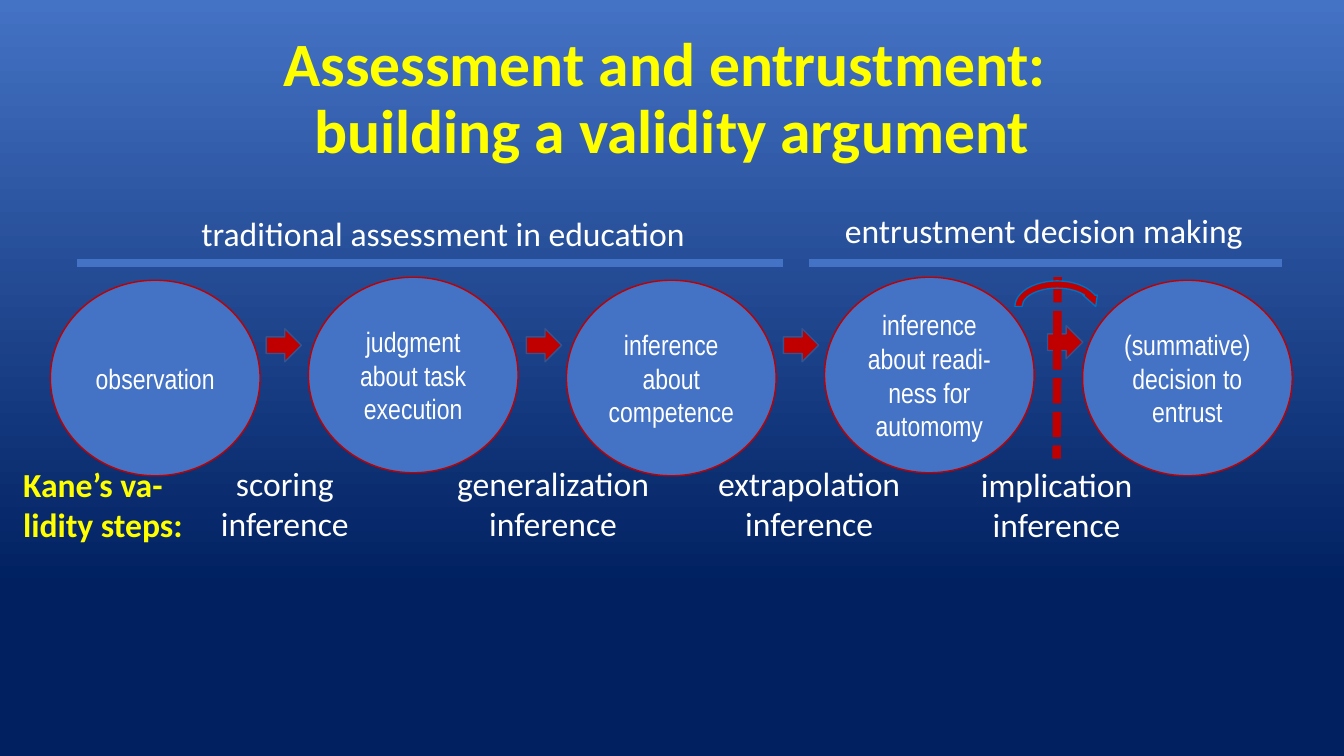
"""Build the slide on assessment, entrustment and the validity argument."""
from dataclasses import dataclass
from typing import NamedTuple

from lxml.etree import SubElement
from pptx import Presentation
from pptx.dml.color import RGBColor
from pptx.enum.dml import MSO_LINE
from pptx.enum.shapes import MSO_CONNECTOR, MSO_SHAPE
from pptx.enum.text import MSO_ANCHOR, MSO_AUTO_SIZE, PP_ALIGN
from pptx.oxml.ns import qn
from pptx.util import Inches, Pt

WIDTH, HEIGHT = Inches(13.33), Inches(7.5)
BLUE, NAVY, RED, YELLOW, WHITE = "4472C4", "002060", "C00000", "FFFF00", "FFFFFF"


class Area(NamedTuple):
    """Left, top, width and height as percentages of the slide."""
    left: float
    top: float
    width: float
    height: float


@dataclass
class Style:
    """Look of a piece of text."""
    size: float
    font: str = "Calibri"
    color: str = WHITE
    bold: bool = False
    align: PP_ALIGN = PP_ALIGN.CENTER


@dataclass
class Label:
    """Free text with its place and style."""
    lines: list[str]
    area: Area
    style: Style
    wrap: bool = False


@dataclass
class Stroke:
    """Straight line between two points given in percentages."""
    start: tuple[float, float]
    end: tuple[float, float]
    color: str
    dashed: bool = False


HEADING = Style(24, align=PP_ALIGN.LEFT)
INFERENCE = Style(24)
KANE = Style(24, color=YELLOW, bold=True, align=PP_ALIGN.LEFT)
STAGE = Style(20, "Arial Narrow")
TITLE = Style(44, color=YELLOW, bold=True)

STAGES = ["observation", "judgment about task execution", "inference about competence",
          "inference about readi- ness for automomy", "(summative) decision to entrust"]
STAGE_LEFT, STAGE_PITCH, STAGE_TOPS = 3.75, 19.2, (37.07, 36.67)
ARROWS = [(19.8, 43.47), (77.94, 43.07), (58.29, 43.47), (39.16, 43.47)]
STROKES = [Stroke((5.7, 34.8), (58.29, 34.8), BLUE),
           Stroke((60.17, 34.8), (95.42, 34.8), BLUE),
           Stroke((78.69, 36.67), (78.62, 60.67), RED, True)]
LABELS = [
    Label(["traditional assessment in education"], Area(14.25, 27.47, 37.81, 6.67), HEADING),
    Label(["entrustment decision making"], Area(62.12, 27.07, 31.43, 6.67), HEADING),
    Label(["scoring", "inference"], Area(15.6, 60.53, 11.18, 12.13), INFERENCE),
    Label(["generalization", "inference"], Area(33.16, 60.53, 15.98, 12.13), INFERENCE),
    Label(["extrapolation", "inference"], Area(52.59, 60.53, 15.23, 12.13), INFERENCE),
    Label(["implication", "inference"], Area(72.17, 60.67, 12.9, 12.13), INFERENCE),
    Label(["Kane’s va-lidity steps:"], Area(0.98, 60.67, 15.5, 12.13), KANE, True),
]


def rgb(color: str) -> RGBColor:
    """Turn a hex string into a colour."""
    return RGBColor.from_string(color)


def across(share: float) -> int:
    """Convert a percentage of the slide width to a length."""
    return round(WIDTH * share / 100)


def down(share: float) -> int:
    """Convert a percentage of the slide height to a length."""
    return round(HEIGHT * share / 100)


def place(area: Area) -> tuple[int, int, int, int]:
    """Convert an area to slide lengths."""
    return across(area.left), down(area.top), across(area.width), down(area.height)


def write(paragraph, text: str, style: Style) -> None:
    """Add one styled run to a paragraph."""
    paragraph.alignment = style.align
    run = paragraph.add_run()
    run.text = text
    run.font.size, run.font.name, run.font.bold = Pt(style.size), style.font, style.bold
    run.font.color.rgb = rgb(style.color)


def paint_background(slide) -> None:
    """Fade the background from blue down to navy."""
    fill = slide.background.fill
    fill.gradient()
    fill.gradient_angle = 270
    for stop, (position, color) in zip(fill.gradient_stops, [(0, BLUE), (0.78, NAVY)]):
        stop.position = position
        stop.color.rgb = rgb(color)


def add_title(slide) -> None:
    """Fill the title placeholder with its two lines."""
    title = slide.shapes.title
    title.left, title.top, title.width, title.height = place(Area(6.9, 3.6, 86.27, 19.33))
    title.text_frame.vertical_anchor = MSO_ANCHOR.MIDDLE
    title.text_frame.auto_size = MSO_AUTO_SIZE.NONE
    paragraph = title.text_frame.paragraphs[0]
    paragraph.line_spacing = 0.9
    write(paragraph, "Assessment and entrustment: ", TITLE)
    paragraph.add_line_break()
    write(paragraph, "building a validity argument", TITLE)


def add_figure(slide, kind: MSO_SHAPE, area: Area, fill: str, outline: str):
    """Draw a filled and outlined preset shape."""
    figure = slide.shapes.add_shape(kind, *place(area))
    figure.shadow.inherit = False
    figure.fill.solid()
    figure.fill.fore_color.rgb = rgb(fill)
    figure.line.color.rgb = rgb(outline)
    figure.line.width = Pt(1)
    return figure


def add_stage(slide, index: int, text: str) -> None:
    """Draw one ellipse of the chain."""
    area = Area(STAGE_LEFT + index * STAGE_PITCH, STAGE_TOPS[index % 2], 15.6, 25.87)
    frame = add_figure(slide, MSO_SHAPE.OVAL, area, BLUE, RED).text_frame
    frame.word_wrap = True
    frame.vertical_anchor = MSO_ANCHOR.MIDDLE
    write(frame.paragraphs[0], text, STAGE)


def add_stroke(slide, stroke: Stroke) -> None:
    """Draw a thick straight line."""
    (x1, y1), (x2, y2) = stroke.start, stroke.end
    connector = slide.shapes.add_connector(
        MSO_CONNECTOR.STRAIGHT, across(x1), down(y1), across(x2), down(y2))
    connector.line.color.rgb = rgb(stroke.color)
    connector.line.width = Pt(6)
    if stroke.dashed:
        connector.line.dash_style = MSO_LINE.SQUARE_DOT
    SubElement(connector.element.spPr, qn("a:effectLst"))


def add_label(slide, label: Label) -> None:
    """Write a label, one paragraph per line."""
    frame = slide.shapes.add_textbox(*place(label.area)).text_frame
    frame.word_wrap = label.wrap
    frame.auto_size = MSO_AUTO_SIZE.SHAPE_TO_FIT_TEXT
    for number, line in enumerate(label.lines):
        paragraph = frame.add_paragraph() if number else frame.paragraphs[0]
        write(paragraph, line, label.style)


def main() -> None:
    """Assemble and save the slide."""
    deck = Presentation()
    deck.slide_width, deck.slide_height = WIDTH, HEIGHT
    slide = deck.slides.add_slide(deck.slide_layouts[5])
    paint_background(slide)
    add_title(slide)
    for index, text in enumerate(STAGES):
        add_stage(slide, index, text)
    for left, top in ARROWS:
        add_figure(slide, MSO_SHAPE.RIGHT_ARROW, Area(left, top, 2.63, 4.4), RED, "325491")
    for label in LABELS:
        add_label(slide, label)
    for stroke in STROKES:
        add_stroke(slide, stroke)
    add_figure(slide, MSO_SHAPE.CIRCULAR_ARROW, Area(75.24, 36.67, 6.83, 7.73), RED, "0070C0")
    deck.save("out.pptx")


if __name__ == "__main__":
    main()
